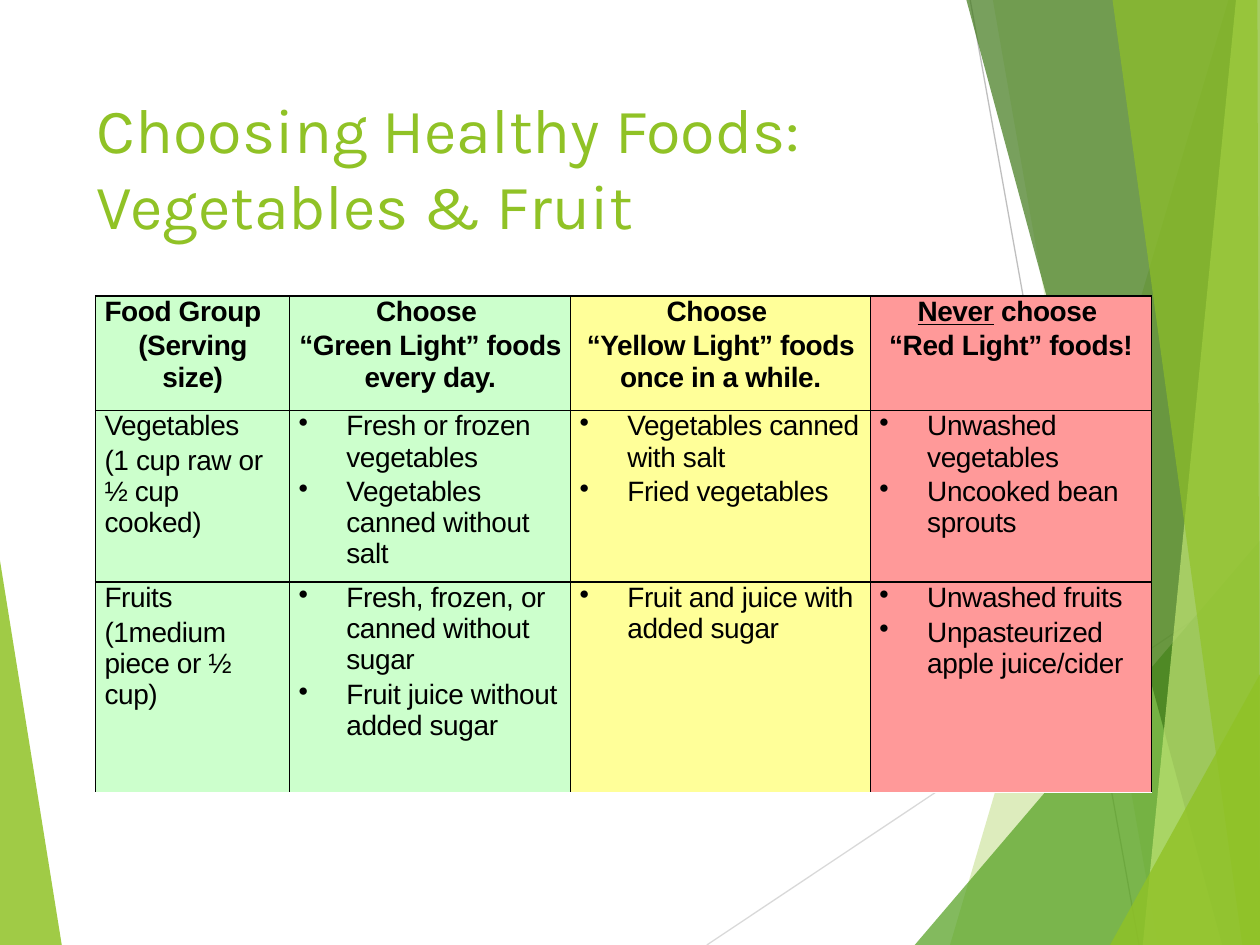
from lxml import etree
from pptx import Presentation
from pptx.dml.color import RGBColor
from pptx.enum import shapes, text
from pptx.oxml import ns
from pptx.util import Inches, Pt

LIME = RGBColor(0x90, 0xC2, 0x26)
GREEN = RGBColor(0x54, 0xA0, 0x21)
FOREST = RGBColor(0x3F, 0x78, 0x19)
PALE_LIME = RGBColor(0xC0, 0xE4, 0x74)
GREY = RGBColor(0xBF, 0xBF, 0xBF)
LIGHT_GREY = RGBColor(0xD9, 0xD9, 0xD9)
BLACK = RGBColor(0, 0, 0)
GREEN_LIGHT = RGBColor(0xCC, 0xFF, 0xCC)
YELLOW_LIGHT = RGBColor(0xFF, 0xFF, 0x99)
RED_LIGHT = RGBColor(0xFF, 0x99, 0x99)

LEFT, CENTER, JUSTIFY = (text.PP_ALIGN.LEFT, text.PP_ALIGN.CENTER,
                         text.PP_ALIGN.JUSTIFY)

# Facets from back to front: corner points, colour, opacity in percent
LEFT_FACET = ([(0, 4.45), (0.49, 7.5), (0, 7.5)], LIME, 85)
RIGHT_FACETS = [
    ([(9.75, 0), (7.54, 7.5), (10, 7.5), (10, 0)], LIME, 30),
    ([(7.88, 0), (9.19, 7.5), (10, 7.5), (10, 0)], LIME, 20),
    ([(7.26, 7.5), (10, 4.29), (10, 7.5)], GREEN, 72),
    ([(7.67, 0), (9.7, 7.5), (10, 7.5), (10, 0)], FOREST, 70),
    ([(9.81, 0), (9.07, 7.5), (10, 7.5), (10, 0)], PALE_LIME, 70),
    ([(8.83, 0), (9.86, 7.5), (10, 7.5), (9.98, 0)], LIME, 65),
    ([(8.81, 7.5), (10, 5.35), (10, 7.5)], LIME, 80),
]

COLUMN_WIDTHS = [1.54, 2.23, 2.38, 2.23]
COLUMN_FILLS = [GREEN_LIGHT, GREEN_LIGHT, YELLOW_LIGHT, RED_LIGHT]
ROW_HEIGHTS = [0.91, 1.29, 1.67]
FOODS = [
    [["Food Group", "(Serving size)"],
     ["Choose ", "“Green Light” foods every day."],
     ["Choose ", "“Yellow Light” foods once in a while."],
     ["Never choose ", "“Red Light” foods!"]],
    [["Vegetables", "(1 cup raw or ½ cup cooked)"],
     ["Fresh or frozen vegetables", "Vegetables canned without salt"],
     ["Vegetables canned with salt", "Fried vegetables"],
     ["Unwashed vegetables", "Uncooked bean sprouts"]],
    [["Fruits", "(1medium piece or ½ cup)"],
     ["Fresh, frozen, or canned without sugar",
      "Fruit juice without added sugar"],
     ["Fruit and juice with added sugar"],
     ["Unwashed fruits", "Unpasteurized apple juice/cider"]],
]


class SlideBuilder:
    title_font, title_size = "Karla", Pt(36)
    table_font, table_size = "Arial", Pt(16)

    def __init__(self, slide):
        self.slide = slide

    def facet(self, points, color, opacity):
        corners = [(Inches(x), Inches(y)) for x, y in points]
        outline = self.slide.shapes.build_freeform(*corners[0])
        outline.add_line_segments(corners[1:], close=True)
        facet = outline.convert_to_shape()
        facet.shadow.inherit = False
        facet.line.fill.background()
        facet.fill.solid()
        facet.fill.fore_color.rgb = color
        rgb = facet.fill._xPr.find(".//" + ns.qn("a:srgbClr"))
        etree.SubElement(rgb, ns.qn("a:alpha"), val=str(opacity * 1000))

    def line(self, x1, y1, x2, y2, color):
        line = self.slide.shapes.add_connector(
            shapes.MSO_CONNECTOR.STRAIGHT,
            Inches(x1), Inches(y1), Inches(x2), Inches(y2))
        line.line.color.rgb = color
        line.line.width = Pt(0.75)
        etree.SubElement(line._element.spPr, ns.qn("a:effectLst"))

    def title(self, wording, left, top, width, height):
        box = self.slide.shapes.add_textbox(
            Inches(left), Inches(top), Inches(width), Inches(height))
        frame = box.text_frame
        frame.word_wrap = True
        frame.vertical_anchor = text.MSO_ANCHOR.TOP
        frame.text = wording
        font = frame.paragraphs[0].font
        font.name, font.size = self.title_font, self.title_size
        font.color.rgb = LIME

    def table(self, rows, left, top, widths, heights, fills):
        table = self.slide.shapes.add_table(
            len(rows), len(widths), Inches(left), Inches(top),
            Inches(sum(widths)), Inches(sum(heights))).table
        for column, width in zip(table.columns, widths):
            column.width = Inches(width)
        for row, height in zip(table.rows, heights):
            row.height = Inches(height)
        for r, row in enumerate(rows):
            sides = "LRT" if r == len(rows) - 1 else "LRTB"
            for c, entries in enumerate(row):
                cell = table.cell(r, c)
                cell.margin_left = cell.margin_right = Inches(0.07)
                cell.margin_top = cell.margin_bottom = 0
                cell.fill.solid()
                cell.fill.fore_color.rgb = fills[c]
                self.borders(cell, sides)
                self.entries(cell.text_frame, entries, r == 0,
                             r > 0 and c > 0)
        first_heading = table.cell(0, 0).text_frame.paragraphs[0]
        first_heading.alignment = JUSTIFY

    def borders(self, cell, sides):
        properties = cell._tc.get_or_add_tcPr()
        for position, side in enumerate(sides):
            border = etree.Element(ns.qn("a:ln" + side), w=str(Pt(1)))
            fill = etree.SubElement(border, ns.qn("a:solidFill"))
            etree.SubElement(fill, ns.qn("a:srgbClr"), val=str(BLACK))
            properties.insert(position, border)

    def entries(self, frame, entries, heading, bulleted):
        for i, entry in enumerate(entries):
            paragraph = frame.paragraphs[0] if i == 0 else frame.add_paragraph()
            paragraph.alignment = CENTER if heading else LEFT
            paragraph.space_before = Pt(2)
            font = paragraph.font
            font.name, font.size = self.table_font, self.table_size
            font.bold, font.color.rgb = heading, BLACK
            # "Never" alone is underlined
            before, never, after = entry.partition("Never")
            for part in filter(None, (before, never, after)):
                run = paragraph.add_run()
                run.text = part
                if part == never:
                    run.font.underline = True
                run._r.get_or_add_rPr().set("spc", "-20")
            if bulleted:
                self.bullet(paragraph)

    def bullet(self, paragraph):
        properties = paragraph._p.get_or_add_pPr()
        properties.set("marL", str(Inches(0.38)))
        properties.set("indent", str(-Inches(0.38)))
        bullet = etree.Element(ns.qn("a:buChar"), char="•")
        properties.find(ns.qn("a:defRPr")).addprevious(bullet)


def main():
    deck = Presentation()
    deck.slide_width, deck.slide_height = Inches(10), Inches(7.5)
    builder = SlideBuilder(deck.slides.add_slide(deck.slide_layouts[6]))

    builder.facet(*LEFT_FACET)
    builder.line(5.61, 7.5, 10, 4.57, LIGHT_GREY)
    builder.line(7.7, 0, 9.04, 7.5, GREY)
    for facet in RIGHT_FACETS:
        builder.facet(*facet)

    builder.title("Choosing Healthy Foods: Vegetables & Fruit",
                  0.67, 0.67, 6.94, 1.44)
    builder.table(FOODS, 0.76, 2.35, COLUMN_WIDTHS, ROW_HEIGHTS, COLUMN_FILLS)
    deck.save("out.pptx")


if __name__ == "__main__":
    main()
